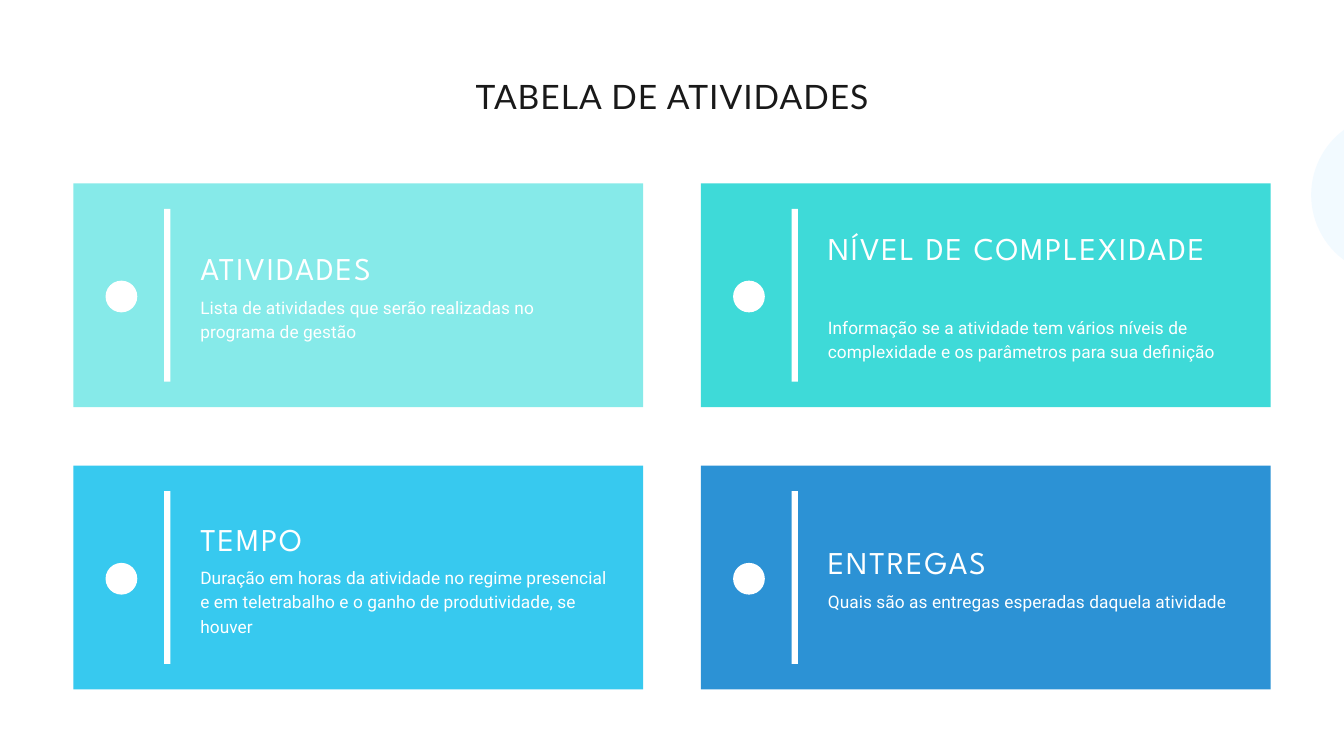
from pptx import Presentation
from pptx.dml.color import RGBColor
from pptx.enum.shapes import MSO_SHAPE
from pptx.enum.text import PP_ALIGN
from pptx.util import Cm, Pt

RECTANGLE, OVAL = MSO_SHAPE.RECTANGLE, MSO_SHAPE.OVAL
LEFT, CENTER = PP_ALIGN.LEFT, PP_ALIGN.CENTER

WHITE = RGBColor(0xFF, 0xFF, 0xFF)
INK = RGBColor(0x19, 0x19, 0x19)
PALE_BLUE = RGBColor(0xF2, 0xFA, 0xFF)
AQUA = RGBColor(0x86, 0xEA, 0xE9)
TURQUOISE = RGBColor(0x3E, 0xDA, 0xD8)
SKY = RGBColor(0x37, 0xC9, 0xEF)
BLUE = RGBColor(0x2C, 0x92, 0xD5)

# All lengths are in centimetres.
GRID_LEFT, GRID_TOP = 2.77, 6.93
CARD_WIDTH, CARD_HEIGHT = 21.54, 8.46
COLUMN_STEP, ROW_STEP = 23.72, 10.67
BAR_WIDTH, BAR_HEIGHT = 0.24, 6.53
DOT_SIZE = 1.2
TEXT_WIDTH = 15.52
TEXT_MIDDLE = 4.14
HEADING_LINE, BODY_LINE, TEXT_GAP = 1.51, 0.88, 0.3

# Colour, heading, lines kept for the heading, body, lines of the body
CARDS = [
    (AQUA, "ATIVIDADES", 1,
     "Lista de atividades que serão realizadas no programa de gestão", 2),
    (TURQUOISE, "NÍVEL DE COMPLEXIDADE", 2,
     "Informação se a atividade tem vários níveis de complexidade "
     "e os parâmetros para sua definição", 2),
    (SKY, "TEMPO", 1,
     "Duração em horas da atividade no regime presencial e em "
     "teletrabalho e o ganho de produtividade, se houver", 3),
    (BLUE, "ENTREGAS", 1,
     "Quais são as entregas esperadas daquela atividade", 1),
]


def add_block(slide, preset, left, top, width, height, color):
    block = slide.shapes.add_shape(
        preset, Cm(left), Cm(top), Cm(width), Cm(height))
    block.shadow.inherit = False
    block.fill.solid()
    block.fill.fore_color.rgb = color
    block.line.fill.background()


def add_text(slide, left, top, width, height, text, font_name, size, color,
             line_spacing, tracking, align=LEFT):
    """Add a text box without margins; tracking is in hundredths of a point."""
    box = slide.shapes.add_textbox(Cm(left), Cm(top), Cm(width), Cm(height))
    frame = box.text_frame
    frame.word_wrap = True
    frame.margin_left = frame.margin_right = 0
    frame.margin_top = frame.margin_bottom = 0
    frame.text = text
    paragraph = frame.paragraphs[0]
    paragraph.alignment = align
    paragraph.line_spacing = Pt(line_spacing)
    font = paragraph.runs[0].font
    font.name = font_name
    font.size = Pt(size)
    font.color.rgb = color
    paragraph.runs[0].font._element.set("spc", str(tracking))


def add_card(slide, left, top, color, heading, heading_lines, body, body_lines):
    add_block(slide, RECTANGLE, left, top, CARD_WIDTH, CARD_HEIGHT, color)
    add_block(slide, RECTANGLE, left + 3.43, top + (CARD_HEIGHT - BAR_HEIGHT) / 2,
              BAR_WIDTH, BAR_HEIGHT, WHITE)
    add_block(slide, OVAL, left + 1.22, top + 3.68, DOT_SIZE, DOT_SIZE, WHITE)

    heading_height = heading_lines * HEADING_LINE
    body_height = body_lines * BODY_LINE
    text_left = left + 4.8
    heading_top = top + TEXT_MIDDLE - (heading_height + TEXT_GAP + body_height) / 2
    body_top = heading_top + heading_height + TEXT_GAP
    add_text(slide, text_left, heading_top, TEXT_WIDTH, heading_height, heading,
             "League Spartan", 34, WHITE, 44.2, 200)
    add_text(slide, text_left, body_top, TEXT_WIDTH, body_height, body,
             "Roboto", 18.5, WHITE, 25.9, 10)


def main():
    presentation = Presentation()
    presentation.slide_width = Cm(50.8)
    presentation.slide_height = Cm(28.58)
    slide = presentation.slides.add_slide(presentation.slide_layouts[6])

    add_text(slide, 9.42, 2.72, 31.98, 1.63, "TABELA DE ATIVIDADES",
             "Lato", 36, INK, 47.2, 110, CENTER)
    add_block(slide, OVAL, 49.56, 4.32, 6.07, 6.1, PALE_BLUE)
    for index, card in enumerate(CARDS):
        row, column = divmod(index, 2)
        add_card(slide, GRID_LEFT + column * COLUMN_STEP,
                 GRID_TOP + row * ROW_STEP, *card)

    presentation.save("out.pptx")


if __name__ == "__main__":
    main()
